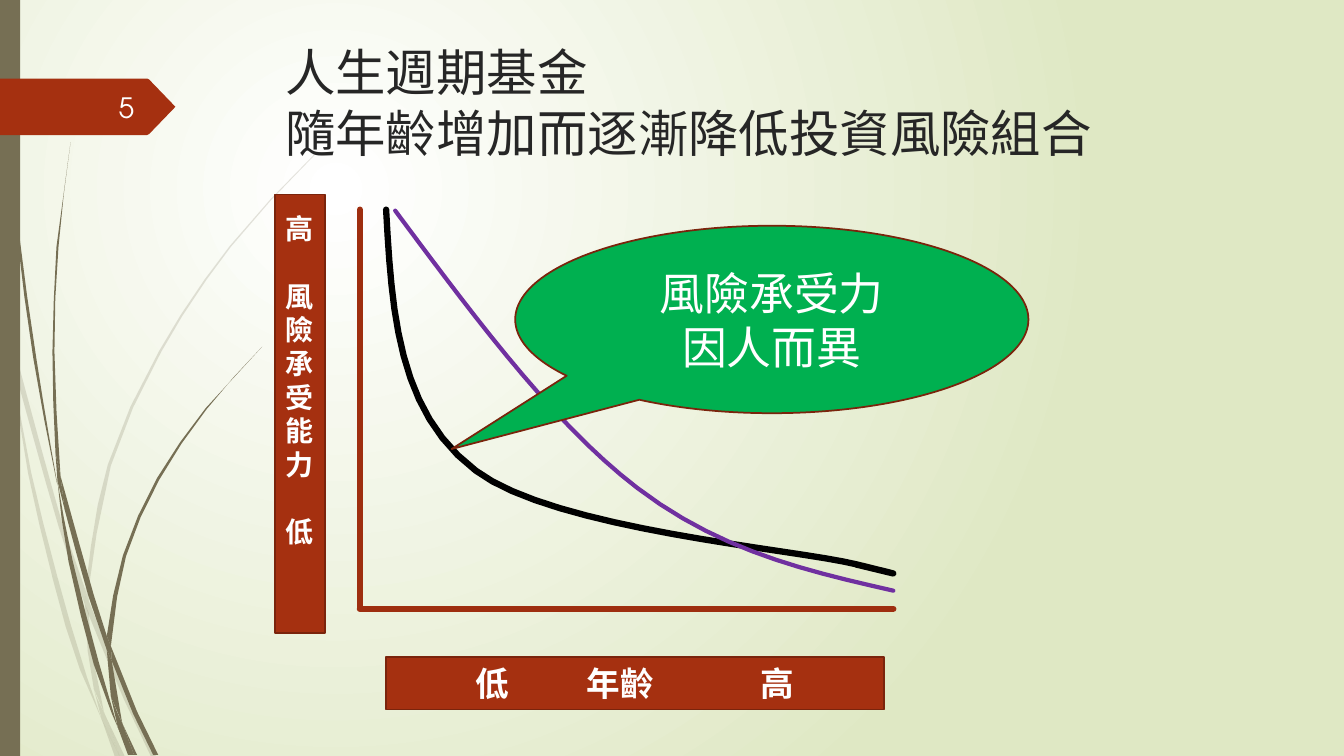
from math import dist

from lxml import etree
from pptx import Presentation
from pptx.dml.color import RGBColor
from pptx.enum.shapes import MSO_CONNECTOR, MSO_SHAPE
from pptx.enum.text import MSO_ANCHOR, PP_ALIGN
from pptx.oxml.ns import qn
from pptx.util import Inches, Pt

TOP, MIDDLE = MSO_ANCHOR.TOP, MSO_ANCHOR.MIDDLE
LEFT, CENTER, RIGHT = PP_ALIGN.LEFT, PP_ALIGN.CENTER, PP_ALIGN.RIGHT
RECT, CALLOUT = MSO_SHAPE.RECTANGLE, MSO_SHAPE.OVAL_CALLOUT
STRAIGHT = MSO_CONNECTOR.STRAIGHT

THEME = {
    "font": "TeX Gyre Adventor",
    "glow": "FFFFFF", "paper": "DFE8C4", "stem": "766F54", "accent": "A53010",
    "edge": "7A240C", "axis": "9E2E0F", "title": "262626", "white": "FFFFFF",
    "number": "FEFFFF", "callout": "00B050", "black": "000000", "purple": "7030A0",
    "title_size": 36, "callout_size": 32, "age_size": 24, "label_size": 20,
    "heavy": 4.5, "medium": 3, "thin": 1.25,
}

TITLE = ["人生週期基金\v隨年齡增加而逐漸降低投資風險組合"]
RISK_LABEL = ["高", "風險承受能", "力", "低"]
RISK_GAPS = [0, 24, 0, 24]
AGE_LABEL = ["低\t年齡\t高"]
AGE_TABS = [1.1, 2.82]
CALLOUT_TEXT = ["風險承受力", "因人而異"]
PAGE = ["5"]

AXES = [((3.57, 2.08), (3.57, 6.03)), ((3.57, 6.04), (8.86, 6.04))]
STEEP_CURVE = [(3.83, 2.08), (4.72, 4.67), (8.5, 5.6), (8.49, 5.6)]
GENTLE_CURVE = [(3.92, 2.09), (6.32, 4.84), (8.86, 5.86)]
TAG = [(0, 0.78), (1.46, 0.78), (1.48, 0.79), (1.74, 1.06),
       (1.48, 1.33), (1.46, 1.34), (0, 1.34)]

PALE_STEMS = [
    [[(0.11, 3.5), (0.09, 3.22), (0, 2.82)], [(0, 2.99), (0.1, 3.44)]],
    [[(0.14, 3.45), (0.62, 5.2), (0.85, 5.86)], [(0.84, 5.99), (0.58, 5.22), (0.17, 3.76)]],
    [[(0.88, 5.96), (1.27, 6.92), (1.55, 7.51)], [(1.5, 7.51), (1.23, 6.94), (0.88, 6.1)]],
    [[(1.19, 7.51), (1.24, 7.51)], [(1.05, 7.11)]],
    [[(0.11, 3.5), (0.31, 4.69), (0.7, 6.19), (1.01, 7.14)],
     [(0.92, 6.93), (0.65, 6.21), (0.28, 4.7), (0.11, 3.5)]],
    [[(0.84, 5.99), (0.87, 6.46), (0.93, 6.83), (1.05, 7.11)],
     [(1.03, 7.06), (0.91, 6.46), (0.88, 6.08)]],
    [[(0.88, 5.96), (0.88, 5.84), (1.1, 4.62), (1.6, 3.49), (2.29, 2.45), (3.12, 1.54)],
     [(3.12, 1.53), (2.28, 2.44), (1.58, 3.48), (1.07, 4.61), (0.85, 5.84)]],
    [[(1.01, 7.14), (1.14, 7.51)], [(1.19, 7.51)]],
    [[(0.88, 6.1), (0.88, 5.96)], [(0.85, 5.86), (0.84, 5.99)]],
    [[(0.93, 6.83), (1.01, 7.14), (1.19, 7.51)], [(1.05, 7.11), (0.96, 6.92)]],
]
DARK_STEMS = [
    [[(0.04, 0), (0.08, 1.09), (0.19, 2.32), (0.36, 3.55), (0.57, 4.81)],
     [(0.56, 4.77), (0.33, 3.55), (0.17, 2.33), (0.07, 1.1), (0.03, 0)]],
    [[(0.6, 4.72), (0.93, 5.9), (1.06, 6.31)], [(1.06, 6.45), (0.88, 5.92), (0.64, 5.05)]],
    [[(1.1, 6.41), (1.36, 7.06), (1.57, 7.49)], [(1.52, 7.49), (1.32, 7.08), (1.11, 6.56)]],
    [[(0.57, 4.77), (0.72, 5.56), (0.98, 6.57), (1.17, 7.22)],
     [(1.11, 7.08), (0.93, 6.59), (0.68, 5.57), (0.57, 4.77)]],
    [[(0.6, 4.72), (0.54, 3.49), (0.58, 2.45), (0.7, 1.41)],
     [(0.56, 2.45), (0.52, 3.49), (0.55, 4.49)]],
    [[(1.33, 7.49), (1.36, 7.49)], [(1.22, 7.19)]],
    [[(0.57, 4.77), (0.64, 5.05)], [(0.6, 4.72), (0.55, 4.49)]],
    [[(1.11, 6.33), (1.25, 5.52), (1.58, 4.76), (2.05, 4.06), (2.6, 3.44)],
     [(2.04, 4.05), (1.56, 4.74), (1.22, 5.51), (1.06, 6.31)], [(1.1, 6.41)]],
    [[(1.17, 7.22), (1.27, 7.49)], [(1.31, 7.49)]],
    [[(1.06, 6.45), (1.1, 6.91), (1.22, 7.19)], [(1.21, 7.16), (1.11, 6.56)]],
    [[(1.06, 6.45), (1.11, 6.56)], [(1.1, 6.41), (1.06, 6.31)]],
    [[(1.1, 6.91), (1.17, 7.22), (1.3, 7.49)], [(1.33, 7.49), (1.22, 7.19), (1.16, 7.06)]],
]


def rgb(name):
    return RGBColor.from_string(THEME[name])


def smooth(pts, per_inch=2):
    if len(pts) < 3:
        return list(pts)
    last = len(pts) - 1
    pull = {i: [(b - a) / 6 for a, b in zip(pts[i - 1], pts[i + 1])] for i in range(1, last)}
    out = [pts[0]]
    for i in range(last):
        a, d = pts[i], pts[i + 1]
        b = [v + t for v, t in zip(a, pull[i])] if i in pull else None
        c = [v - t for v, t in zip(d, pull[i + 1])] if i + 1 in pull else None
        b = b or [(v + w) / 2 for v, w in zip(a, c)]
        c = c or [(v + w) / 2 for v, w in zip(b, d)]
        steps = max(1, round((dist(a, b) + dist(b, c) + dist(c, d)) * per_inch))
        for n in range(1, steps + 1):
            t = n / steps
            u = 1 - t
            out.append(tuple(u**3 * a[k] + 3 * u * u * t * b[k] + 3 * u * t * t * c[k] + t**3 * d[k]
                             for k in (0, 1)))
    return out


def stroke(sp, color, width):
    sp.line.color.rgb = rgb(color)
    sp.line.width = Pt(THEME[width])
    sp.element.spPr.find(qn("a:ln")).set("cap", "rnd")


def paint(sp, fill=None, line=None, width=None, alpha=None):
    sp.shadow.inherit = False
    if fill:
        sp.fill.solid()
        sp.fill.fore_color.rgb = rgb(fill)
        if alpha:
            color = sp.element.spPr.find(qn("a:solidFill"))[0]
            etree.SubElement(color, qn("a:alpha")).set("val", str(alpha * 1000))
    else:
        sp.fill.background()
    if line:
        stroke(sp, line, width)
    else:
        sp.line.fill.background()


def outline(s, pts, close=True, **look):
    pts = [(Inches(x), Inches(y)) for x, y in pts]
    fb = s.shapes.build_freeform(*pts[0])
    fb.add_line_segments(pts[1:], close=close)
    paint(fb.convert_to_shape(), **look)


def box(s, kind, at, **look):
    sp = s.shapes.add_shape(kind, *map(Inches, at))
    paint(sp, **look)
    return sp


def write(sp, lines, size, color, bold=False, align=LEFT, anchor=MIDDLE, gaps=None, tabs=()):
    tf = sp.text_frame
    tf.word_wrap = True
    tf.vertical_anchor = anchor
    for i, line in enumerate(lines):
        p = tf.add_paragraph() if i else tf.paragraphs[0]
        p.text = line
        p.alignment = align
        if gaps:
            p.space_before = Pt(gaps[i])
        if tabs:
            stops = etree.SubElement(p._p.get_or_add_pPr(), qn("a:tabLst"))
            for pos in tabs:
                etree.SubElement(stops, qn("a:tab"), pos=str(Inches(pos)), algn="l")
        for r in p.runs:
            r.font.name = THEME["font"]
            r.font.size = Pt(THEME[size])
            r.font.bold = bold
            r.font.color.rgb = rgb(color)
    return tf


def background(s):
    fill = s.background.fill
    fill.gradient()
    for stop, name, pos in zip(fill.gradient_stops, ("glow", "paper"), (0, 1)):
        stop.color.rgb = rgb(name)
        stop.position = pos
    lin = next(s.element.iter(qn("a:lin")))
    radial = etree.Element(qn("a:path"))
    radial.set("path", "circle")
    etree.SubElement(radial, qn("a:fillToRect"), l="50000", t="50000", r="100000", b="100000")
    lin.getparent().replace(lin, radial)


def main():
    prs = Presentation()
    prs.slide_width, prs.slide_height = Inches(13.33), Inches(7.5)
    s = prs.slides.add_slide(prs.slide_layouts[6])
    background(s)

    for stems, alpha in ((PALE_STEMS, 20), (DARK_STEMS, None)):
        for edges in stems:
            outline(s, [pt for edge in edges for pt in smooth(edge)], fill="stem", alpha=alpha)
    box(s, RECT, (0, 0, 0.2, 7.5), fill="stem")
    outline(s, TAG, fill="accent")

    title = s.shapes.add_textbox(*map(Inches, (2.73, 0.36, 9.75, 1.4)))
    write(title, TITLE, "title_size", "title", anchor=TOP)

    outline(s, smooth(STEEP_CURVE, 4), close=False, line="black", width="heavy")
    for start, end in AXES:
        axis = s.shapes.add_connector(STRAIGHT, *map(Inches, start + end))
        stroke(axis, "axis", "heavy")
        etree.SubElement(axis.element.spPr, qn("a:effectLst"))

    risk = box(s, RECT, (2.73, 1.93, 0.49, 4.35), fill="accent", line="edge", width="thin")
    tf = write(risk, RISK_LABEL, "label_size", "white", bold=True, align=CENTER, gaps=RISK_GAPS)
    tf.margin_bottom = Inches(0.72)
    age = box(s, RECT, (3.83, 6.52, 4.94, 0.52), fill="accent", line="edge", width="thin")
    tf = write(age, AGE_LABEL, "age_size", "white", bold=True, tabs=AGE_TABS)
    tf.margin_left = Inches(0.89)

    outline(s, smooth(GENTLE_CURVE, 4), close=False, line="purple", width="medium")
    callout = box(s, CALLOUT, (5.11, 2.24, 5.09, 1.86), fill="callout", line="edge", width="thin")
    callout.adjustments[0], callout.adjustments[1] = -0.624, 0.691
    write(callout, CALLOUT_TEXT, "callout_size", "white", align=CENTER)

    number = s.shapes.add_textbox(*map(Inches, (0.58, 0.86, 0.85, 0.4)))
    write(number, PAGE, "label_size", "number", align=RIGHT)
    prs.save("out.pptx")


if __name__ == "__main__":
    main()
